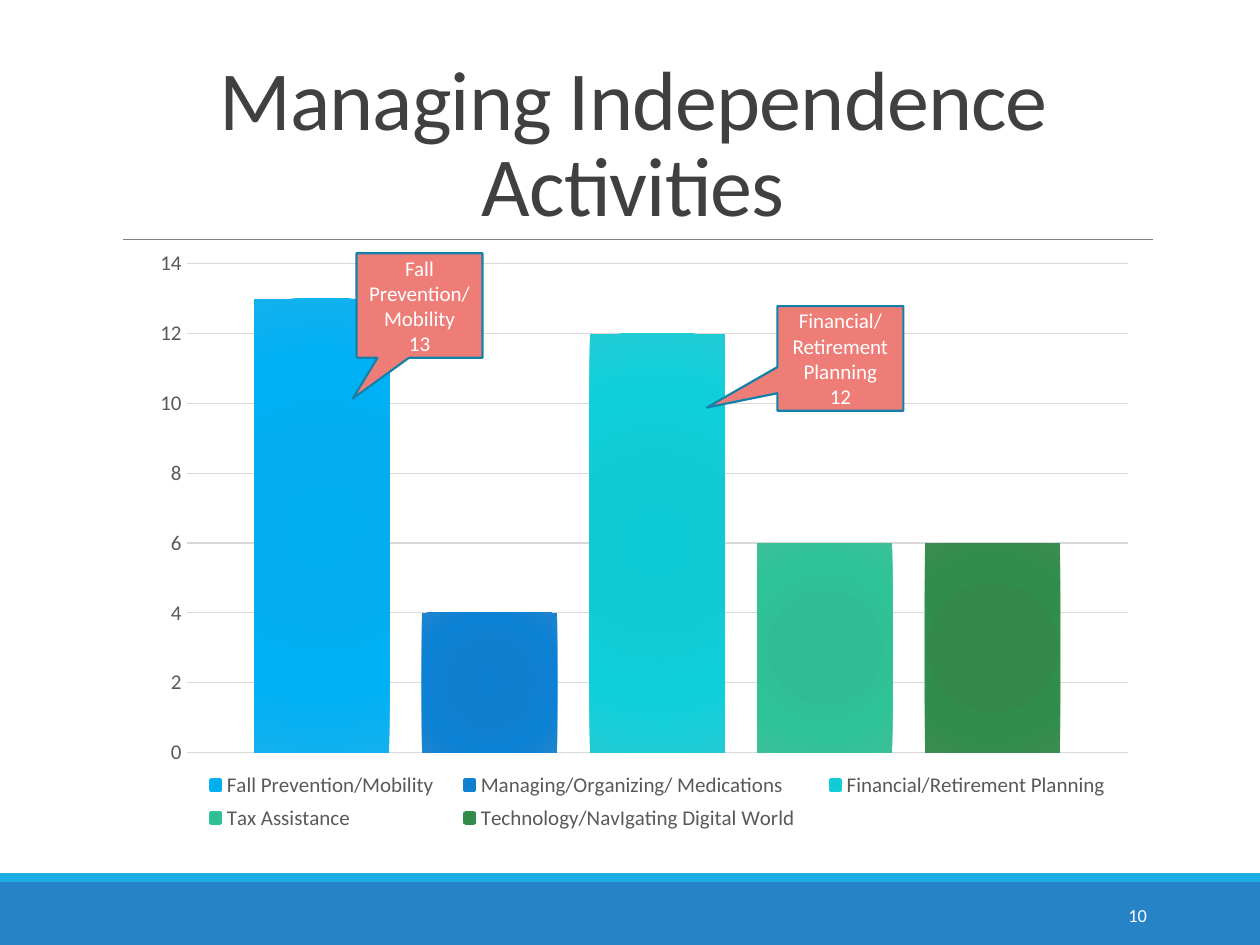
from pptx import Presentation
from pptx.chart.data import CategoryChartData
from pptx.dml.color import RGBColor
from pptx.enum.chart import XL_CHART_TYPE as CT, XL_LEGEND_POSITION as LP, XL_TICK_MARK as TM
from pptx.enum.shapes import MSO_CONNECTOR as CN, MSO_SHAPE as SH
from pptx.enum.text import MSO_ANCHOR as MA, PP_ALIGN as PA
from pptx.oxml import parse_xml
from pptx.oxml.ns import nsdecls, qn
from pptx.util import Inches, Pt

W, H = 10, 7.5
FONT = "Calibri"
SERIES = [
    ("Fall Prevention/Mobility", 13, ("00ADEF", "03ADEE", "00B1F5", "12B1EE")),
    ("Managing/Organizing/ Medications ", 4, ("0D7ECF", "117ECD", "0D81D4", "1E84CE")),
    ("Financial/Retirement Planning", 12, ("0ECBD5", "12CAD3", "0FD0DA", "20CBD4")),
    ("Tax Assistance", 6, ("2DBE94", "30BD94", "2EC397", "3CC09A")),
    ("Technology/NavIgating Digital World ", 6, ("2F8949", "32894A", "318D4B", "3A8C51")),
]
CALLOUTS = [
    ((2.83, 2.01, 1, 0.83), (-0.53, 0.89), ("Fall Prevention/Mobility", "13")),
    ((6.17, 2.43, 1, 0.83), (-1.06, 0.47), ("Financial/ Retirement Planning", "12")),
]


def rgb(color):
    """Turn a hex string into a colour."""
    return RGBColor.from_string(color)


def inches(box):
    """Turn a box of numbers into lengths."""
    return [Inches(v) for v in box]


def style(font, size, color):
    """Set face, size and colour of a font."""
    font.name, font.size, font.color.rgb = FONT, Pt(size), rgb(color)


def write(tf, lines, size, color, align, anchor):
    """Fill a text frame with one paragraph per line."""
    tf.word_wrap, tf.vertical_anchor = True, anchor
    for i, line in enumerate(lines):
        p = tf.paragraphs[0] if i == 0 else tf.add_paragraph()
        p.alignment = align
        r = p.add_run()
        r.text = line
        style(r.font, size, color)


def add_shape(s, kind, box, fill):
    """Add a flat filled shape without an outline."""
    sp = s.shapes.add_shape(kind, *inches(box))
    sp.shadow.inherit = False
    sp.fill.solid()
    sp.fill.fore_color.rgb = rgb(fill)
    sp.line.fill.background()
    return sp


def add_title(s, box, text):
    """Add the bottom-anchored title and the rule below it."""
    tf = s.shapes.add_textbox(*inches(box)).text_frame
    write(tf, [text], 48, "404040", PA.CENTER, MA.BOTTOM)
    p = tf.paragraphs[0]
    p.line_spacing = 0.85
    p.runs[0].font._element.set("spc", "-50")
    y = box[1] + box[3]
    ends = inches((0.98, y, 9.15, y))
    rule = s.shapes.add_connector(CN.STRAIGHT, *ends)
    rule.line.color.rgb, rule.line.width = rgb("808080"), Pt(0.5)
    rule._element.spPr.append(parse_xml(f"<a:effectLst {nsdecls('a')}/>"))


def add_footer(s, box, number):
    """Add the footer band, its top strip and the slide number."""
    x, y, w, h = box
    add_shape(s, SH.RECTANGLE, box, "2683C6")
    add_shape(s, SH.RECTANGLE, (x, y - 0.07, w, 0.07), "1CADE4")
    tf = s.shapes.add_textbox(*inches((8.12, y + 0.06, 1.08, 0.4))).text_frame
    write(tf, [number], 10.5, "FFFFFF", PA.RIGHT, MA.MIDDLE)


def radial_fill(colors):
    """Build a circular gradient from four colours."""
    stops = "".join(f'<a:gs pos="{pos}000"><a:srgbClr val="{c}"/></a:gs>'
                    for pos, c in zip((0, 34, 70, 100), colors))
    return parse_xml(
        f'<a:gradFill {nsdecls("a")} rotWithShape="1"><a:gsLst>{stops}</a:gsLst><a:path path="circle">'
        '<a:fillToRect l="100000" t="100000" r="100000" b="100000"/></a:path></a:gradFill>')


def set_layout(parent, index, box, target=""):
    """Place a chart part by shares of the chart's size."""
    for old in parent.findall(qn("c:layout")):
        parent.remove(old)
    sizes = "".join(f'<c:{k} val="{v}"/>' for k, v in zip("xywh", box))
    parent.insert(index, parse_xml(
        f'<c:layout {nsdecls("c")}><c:manualLayout>{target}'
        f'<c:xMode val="edge"/><c:yMode val="edge"/>{sizes}</c:manualLayout></c:layout>'))


def add_activity_chart(s, box):
    """Add the column chart with one series per activity."""
    data = CategoryChartData()
    data.categories = ["1"]
    for name, value, _ in SERIES:
        data.add_series(name, [value])
    chart = s.shapes.add_chart(CT.COLUMN_CLUSTERED, *inches(box), data).chart
    style(chart.font, 10, "000000")
    chart.has_title = False
    chart.has_legend = True
    chart.legend.position, chart.legend.include_in_layout = LP.BOTTOM, False
    style(chart.legend.font, 12, "595959")

    chart.category_axis.visible = False
    axis = chart.value_axis
    axis.minimum_scale, axis.maximum_scale, axis.major_unit = 0, 14, 2
    axis.major_tick_mark = axis.minor_tick_mark = TM.NONE
    axis.format.line.fill.background()
    style(axis.tick_labels.font, 12, "595959")
    grid = axis.major_gridlines.format.line
    grid.color.rgb, grid.width = rgb("D9D9D9"), Pt(0.75)

    plot = chart.plots[0]
    plot.gap_width, plot.overlap, plot.vary_by_categories = 100, -24, False
    for series, (_, _, colors) in zip(plot.series, SERIES):
        series.format.fill.solid()
        solid = series._element.spPr.find(qn("a:solidFill"))
        solid.getparent().replace(solid, radial_fill(colors))
    set_layout(chart._chartSpace.chart.plotArea, 0, (0.07, 0.04, 0.9, 0.8),
               '<c:layoutTarget val="inner"/>')
    set_layout(chart.legend._element, 1, (0.07, 0.86, 0.9, 0.12))


def add_callout(s, box, tip, lines):
    """Add a callout whose tip is a share of its size from the centre."""
    sp = add_shape(s, SH.RECTANGULAR_CALLOUT, box, "EE7D77")
    sp.line.color.rgb, sp.line.width = rgb("1580A9"), Pt(1.25)
    sp.adjustments[0], sp.adjustments[1] = tip
    write(sp.text_frame, lines, 12, "FFFFFF", PA.CENTER, MA.MIDDLE)


def main():
    """Build and save the slide."""
    prs = Presentation()
    prs.slide_width, prs.slide_height = Inches(W), Inches(H)
    s = prs.slides.add_slide(prs.slide_layouts[6])
    add_footer(s, (0, H - 0.5, W, 0.5), "10")
    add_title(s, (0.9, 0.31, 8.25, 1.59), "Managing Independence Activities")
    add_activity_chart(s, (0.9, 1.9, 8.3, 4.85))
    for box, tip, lines in CALLOUTS:
        add_callout(s, box, tip, lines)
    prs.save("out.pptx")


if __name__ == "__main__":
    main()
